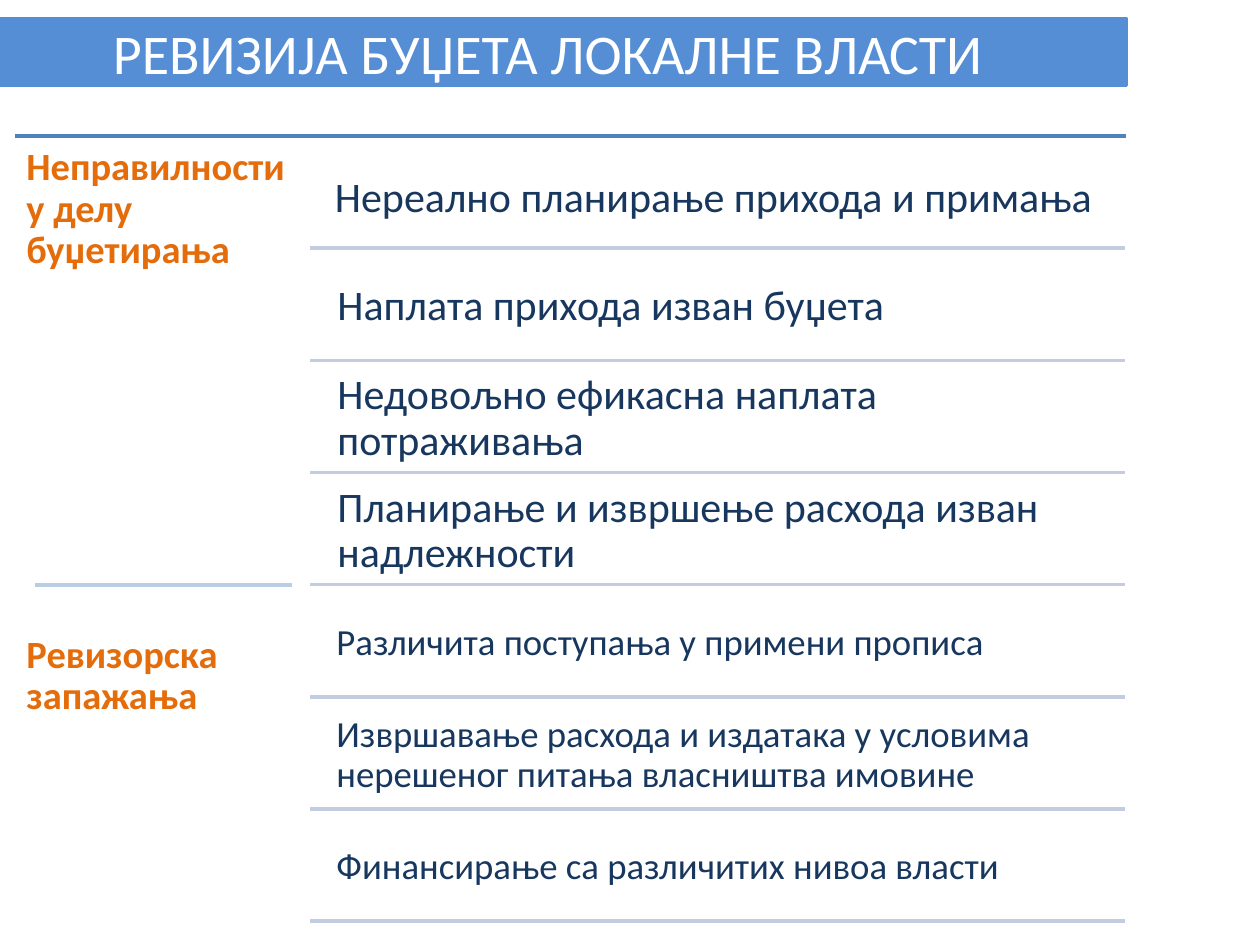
from lxml.etree import SubElement
from pptx import Presentation
from pptx.dml.color import RGBColor
from pptx.enum.shapes import MSO_CONNECTOR, MSO_SHAPE
from pptx.enum.text import MSO_ANCHOR, MSO_AUTO_SIZE, PP_ALIGN
from pptx.oxml.ns import qn
from pptx.util import Inches, Pt

BAND_BLUE = RGBColor(0x55, 0x8E, 0xD5)
TOP_RULE = RGBColor(0x4F, 0x81, 0xBD)
ROW_RULE = RGBColor(0xC2, 0xCD, 0xE1)
SECTION_RULE = RGBColor(0xB9, 0xCD, 0xE5)
ORANGE = RGBColor(0xE4, 0x6C, 0x0A)
NAVY = RGBColor(0x17, 0x37, 0x5E)
WHITE = RGBColor(0xFF, 0xFF, 0xFF)

ROW_TOP = 1.12
ROW_PITCH = 0.89

HEADINGS = [
    ("Неправилности у делу буџетирања", 1.08, 3.5),
    ("Ревизорска запажања", 4.95, 2.4),
]
FINDINGS = [
    ("Нереално планирање прихода и примања", 24),
    ("Наплата прихода изван буџета", 24),
    ("Недовољно ефикасна наплата потраживања", 24),
    ("Планирање и извршење расхода изван надлежности", 24),
    ("Различита поступања у примени прописа", 21),
    ("Извршавање расхода и издатака у условима нерешеног питања власништва имовине", 21),
    ("Финансирање са различитих нивоа власти", 21),
]


def add_rule(left, right, top, color, width=2):
    """Draw a horizontal line without a shadow."""
    rule = slide.shapes.add_connector(
        MSO_CONNECTOR.STRAIGHT, Inches(left), Inches(top), Inches(right), Inches(top))
    rule.line.color.rgb = color
    rule.line.width = Pt(width)
    SubElement(rule._element.spPr, qn("a:effectLst"))


def add_text(text, left, top, width, height, size, color, inset, bold=False,
             anchor=MSO_ANCHOR.TOP):
    box = slide.shapes.add_textbox(Inches(left), Inches(top), Inches(width), Inches(height))
    frame = box.text_frame
    frame.word_wrap = True
    frame.vertical_anchor = anchor
    frame.margin_left = frame.margin_right = Inches(inset)
    frame.margin_top = frame.margin_bottom = Inches(inset)
    frame.text = text
    paragraph = frame.paragraphs[0]
    paragraph.line_spacing = 0.9
    font = paragraph.runs[0].font
    font.name = "Calibri"
    font.size = Pt(size)
    font.bold = bold
    font.color.rgb = color


presentation = Presentation()
presentation.slide_width = Inches(10)
presentation.slide_height = Inches(7.5)
slide = presentation.slides.add_slide(presentation.slide_layouts[5])

# Title on a blue band
band = slide.shapes.add_shape(
    MSO_SHAPE.RECTANGLE, Inches(0), Inches(0.15), Inches(8.94), Inches(0.53))
band.shadow.inherit = False
band.fill.solid()
band.fill.fore_color.rgb = BAND_BLUE
band.line.color.rgb = BAND_BLUE
band.line.width = Pt(2)

title = slide.shapes.title
band._element.addnext(title._element)  # bring the title in front of the band
title.left, title.top = Inches(0), Inches(0.15)
title.width, title.height = Inches(8.7), Inches(0.52)
title.text_frame.text = "РЕВИЗИЈА БУЏЕТА ЛОКАЛНЕ ВЛАСТИ"
title.text_frame.auto_size = MSO_AUTO_SIZE.NONE
title.text_frame.vertical_anchor = MSO_ANCHOR.MIDDLE
title_paragraph = title.text_frame.paragraphs[0]
title_paragraph.alignment = PP_ALIGN.CENTER
title_font = title_paragraph.runs[0].font
title_font.name = "Calibri"
title_font.size = Pt(32)
title_font.color.rgb = WHITE

# Section headings on the left
add_rule(0.12, 8.94, 1.08, TOP_RULE)
for heading, top, height in HEADINGS:
    add_text(heading, 0.12, top, 2.34, height, 22, ORANGE, 0.09, bold=True)

# Findings on the right, each closed by a rule
for index, (finding, size) in enumerate(FINDINGS):
    top = ROW_TOP + index * ROW_PITCH
    left = 2.56 if index == 0 else 2.58
    text_top = 1.15 if index == 0 else top
    inset = 0.1 if size == 24 else 0.09
    add_text(finding, left, text_top, 6.35, 0.85, size, NAVY, inset,
             anchor=MSO_ANCHOR.MIDDLE)
    add_rule(2.46, 8.93, top + 0.85, ROW_RULE)

add_rule(0.28, 2.32, 4.64, SECTION_RULE, 2.25)

presentation.save("out.pptx")
